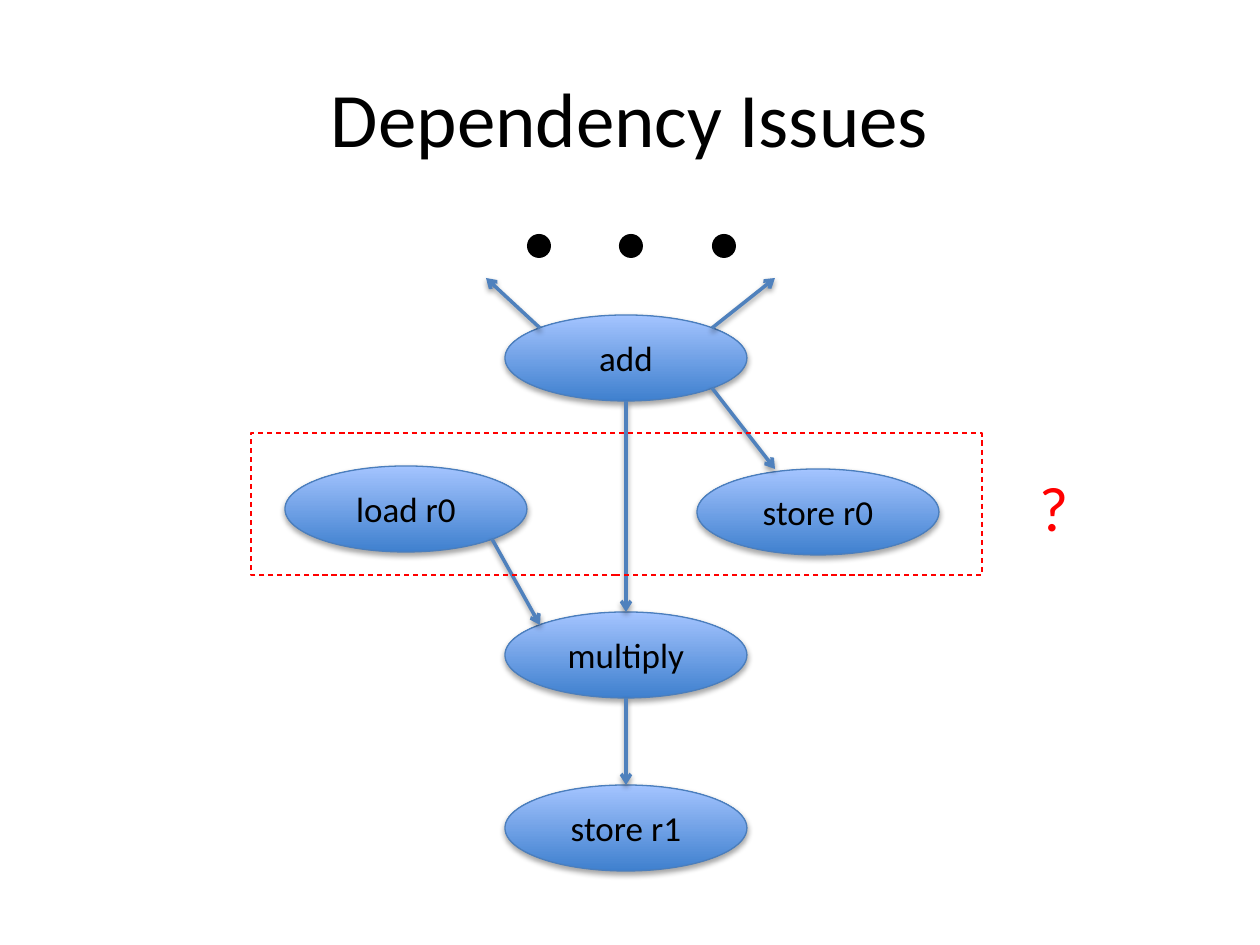
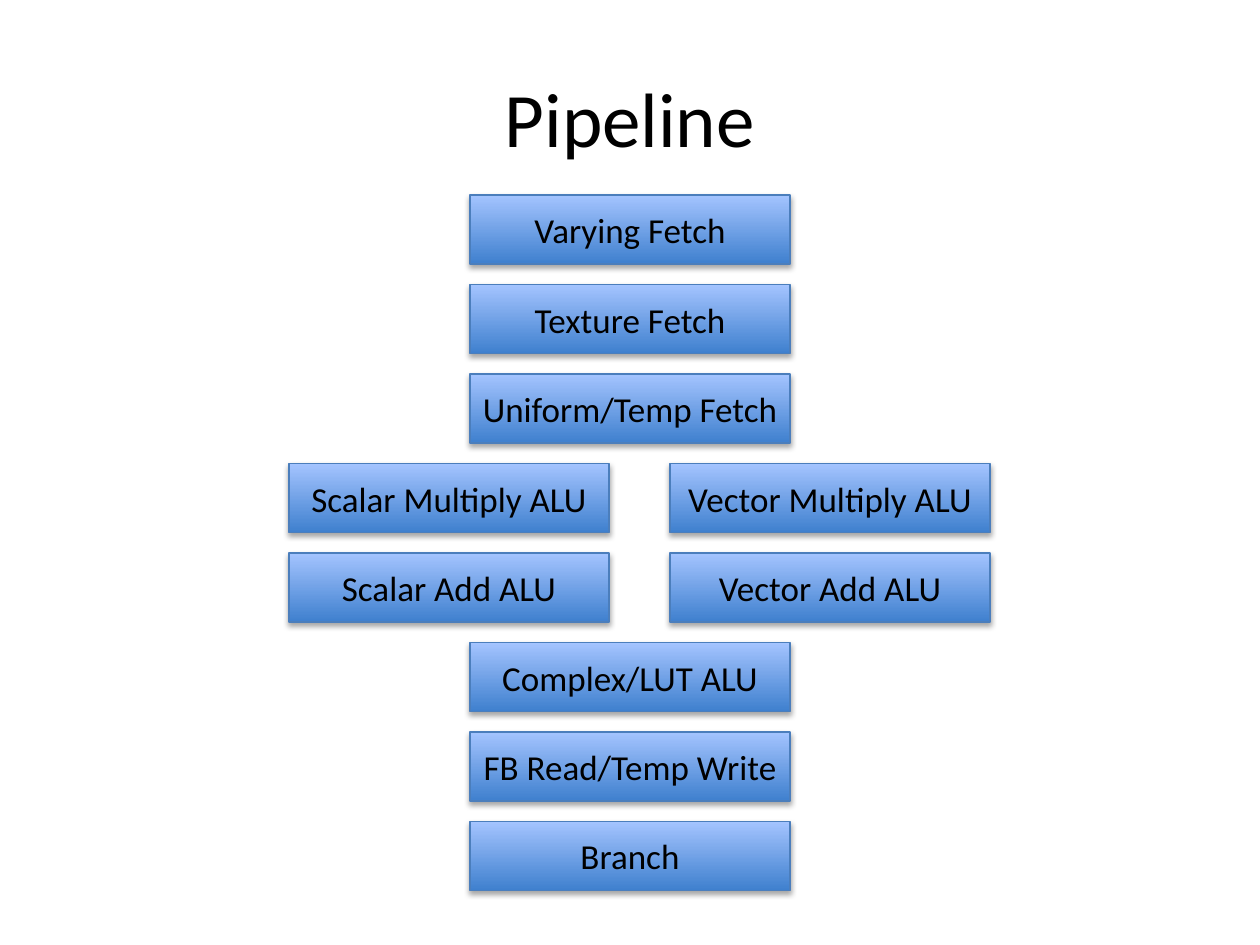
"""Build two slides on shader scheduling: an operation graph and a pipeline."""
from lxml.etree import SubElement
from pptx import Presentation
from pptx.dml.color import RGBColor
from pptx.enum.dml import MSO_LINE_DASH_STYLE as DASH
from pptx.enum.shapes import MSO_CONNECTOR as CXN, MSO_SHAPE as SHAPE
from pptx.enum.text import MSO_ANCHOR as ANCHOR, MSO_AUTO_SIZE as AUTO, PP_ALIGN as ALIGN
from pptx.oxml.ns import qn
from pptx.util import Emu, Pt

PX = 914400 / 126
FONT = "Calibri"
BLACK = RGBColor(0x00, 0x00, 0x00)
RED = RGBColor(0xFF, 0x00, 0x00)
GRAD_BOTTOM = RGBColor(0x3F, 0x80, 0xCE)
GRAD_TOP = RGBColor(0xA4, 0xC4, 0xFF)
OUTLINE = RGBColor(0x4B, 0x7E, 0xBC)
ARROW = RGBColor(0x4F, 0x81, 0xBD)

NODE_W, NODE_H = 242, 86
NODES = {
    "add": (505, 315),
    "store r0": (697, 469),
    "multiply": (505, 612),
    "load r0": (285, 466),
    "store r1": (505, 785),
}
STAGE_W, STAGE_H = 320, 69
STAGE_TOP, ROW_PITCH = 195, 89.5
CENTRE_X = 470
PAIR_X = (289, 670)
STAGES = [
    ["Varying Fetch"],
    ["Texture Fetch"],
    ["Uniform/Temp Fetch"],
    ["Scalar Multiply ALU", "Vector Multiply ALU"],
    ["Scalar Add ALU", "Vector Add ALU"],
    ["Complex/LUT ALU"],
    ["FB Read/Temp Write"],
    ["Branch"],
]


def emu(*lengths):
    return [Emu(round(n * PX)) for n in lengths]


def apply(obj, **fmt):
    for name, value in fmt.items():
        setattr(obj, name, value)


def write(sp, text, size, color=BLACK, align=ALIGN.CENTER, **frame):
    tf = sp.text_frame
    apply(tf, **{"word_wrap": True, "vertical_anchor": ANCHOR.MIDDLE, **frame})
    p = tf.paragraphs[0]
    p.alignment = align
    r = p.add_run()
    r.text = text
    apply(r.font, name=FONT, size=Pt(size))
    r.font.color.rgb = color


def set_line(sp, color, width):
    sp.line.color.rgb = color
    sp.line.width = Pt(width)


def add_shadow(sp, opacity, distance):
    effects = SubElement(sp.element.spPr, qn("a:effectLst"))
    shadow = SubElement(effects, qn("a:outerShdw"), blurRad="40000",
                        dist=str(distance), dir="5400000", rotWithShape="0")
    color = SubElement(shadow, qn("a:srgbClr"), val=str(BLACK))
    SubElement(color, qn("a:alpha"), val=str(opacity * 1000))


def add_title(s, text):
    write(s.shapes.add_textbox(*emu(63, 38, 1134, 157)), text, 44)


def add_block(s, kind, text, x, y, w, h):
    sp = s.shapes.add_shape(kind, *emu(x, y, w, h))
    sp.fill.gradient()
    sp.fill.gradient_angle = 90
    for stop, color in zip(sp.fill.gradient_stops, (GRAD_BOTTOM, GRAD_TOP)):
        stop.color.rgb = color
    set_line(sp, OUTLINE, 0.75)
    add_shadow(sp, 35, 23000)
    inset, = emu(4)
    write(sp, text, 20, margin_left=inset, margin_right=inset)
    return sp


def add_dot(s, x, y, size):
    sp = s.shapes.add_shape(SHAPE.OVAL, *emu(x, y, size, size))
    sp.shadow.inherit = False
    sp.fill.solid()
    sp.fill.fore_color.rgb = BLACK
    sp.line.fill.background()


def add_arrow(s, start, end, target=None):
    sp = s.shapes.add_connector(CXN.STRAIGHT, *emu(*start, *end))
    if target is not None:
        sp.end_connect(target, 0)
    set_line(sp, ARROW, 2)
    SubElement(sp.line._get_or_add_ln(), qn("a:tailEnd"), type="arrow")
    add_shadow(sp, 38, 20000)


def add_dashed_frame(s, x, y, w, h):
    sp = s.shapes.add_shape(SHAPE.RECTANGLE, *emu(x, y, w, h))
    sp.shadow.inherit = False
    sp.fill.background()
    set_line(sp, RED, 0.75)
    sp.line.dash_style = DASH.DASH


def rim(name, dx, dy):
    """Return the point of a node's outline in direction (dx, dy)."""
    x, y = NODES[name]
    reach = (dx * dx + dy * dy) ** 0.5
    return (round(x + NODE_W / 2 * (1 + dx / reach)),
            round(y + NODE_H / 2 * (1 + dy / reach)))


def build_dependencies(s):
    add_title(s, "Dependency Issues")
    nodes = {name: add_block(s, SHAPE.OVAL, name, x, y, NODE_W, NODE_H)
             for name, (x, y) in NODES.items()}
    for x in (527, 619, 712):
        add_dot(s, x, 234, 24)
    add_arrow(s, rim("add", -1, -1), (486, 278))
    add_arrow(s, rim("add", 1, -1), (775, 278))
    add_arrow(s, rim("add", 1, 1), (775, 469))
    add_arrow(s, rim("load r0", 1, 1), rim("multiply", -1, -1))
    for source, target in (("add", "multiply"), ("multiply", "store r1")):
        add_arrow(s, rim(source, 0, 1), rim(target, 0, -1), nodes[target])
    add_dashed_frame(s, 251, 433, 731, 142)
    write(s.shapes.add_textbox(*emu(1027, 462, 55, 89)), "?", 36, RED, ALIGN.LEFT,
          word_wrap=False, vertical_anchor=ANCHOR.TOP,
          auto_size=AUTO.SHAPE_TO_FIT_TEXT)


def build_pipeline(s):
    add_title(s, "Pipeline")
    for row, names in enumerate(STAGES):
        columns = PAIR_X if len(names) == 2 else (CENTRE_X,)
        for x, name in zip(columns, names):
            add_block(s, SHAPE.RECTANGLE, name, x, STAGE_TOP + row * ROW_PITCH,
                      STAGE_W, STAGE_H)


def main():
    prs = Presentation()
    prs.slide_width, prs.slide_height = emu(1260, 945)
    for build in (build_dependencies, build_pipeline):
        build(prs.slides.add_slide(prs.slide_layouts[6]))
    prs.save("out.pptx")


if __name__ == "__main__":
    main()
